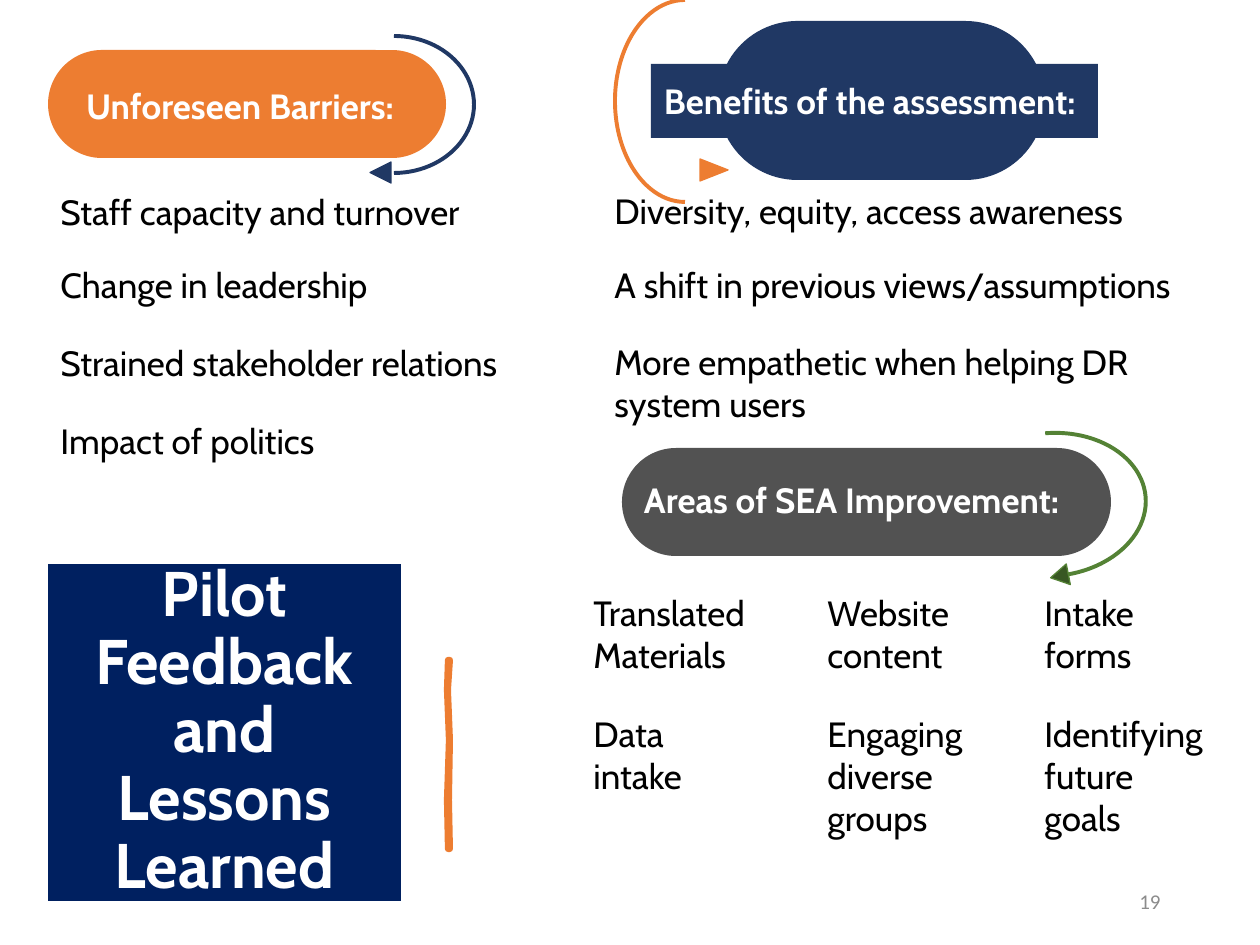
"""Build the slide on pilot feedback and lessons learned."""
from pptx import Presentation
from pptx.dml.color import RGBColor
from pptx.enum.shapes import MSO_SHAPE as Shape
from pptx.enum.text import MSO_ANCHOR as Anchor, MSO_AUTO_SIZE as Auto, PP_ALIGN as Align
from pptx.util import Emu, Pt

SCALE = 914400 / 126
ORANGE = RGBColor(0xED, 0x7D, 0x31)
BLUE = RGBColor(0x20, 0x38, 0x64)
NAVY = RGBColor(0x00, 0x20, 0x60)
GREEN = RGBColor(0x54, 0x82, 0x35)
FOREST = RGBColor(0x38, 0x57, 0x23)
DARK = RGBColor(0x52, 0x52, 0x52)
GREY = RGBColor(0x8C, 0x8C, 0x8C)
BLACK = RGBColor(0, 0, 0)
WHITE = RGBColor(0xFF, 0xFF, 0xFF)

RIGHT, LEFT = (162, 54), (54, 162)
BARRIERS = (
    ("Staff capacity and turnover", (48, 184, 428, 55)),
    ("Change in leadership", (48, 257, 386, 55)),
    ("Strained stakeholder relations", (48, 335, 489, 55)),
    ("Impact of politics", (48, 413, 334, 55)),
)
BENEFITS = (
    ("Diversity, equity, access awareness", (602, 183, 622, 55)),
    ("A shift in previous views/assumptions", (602, 257, 590, 55)),
    ("More empathetic when helping DR system users", (602, 334, 610, 97)),
)
AREAS = (
    ("Translated Materials", "Website content", "Intake forms"),
    ("Data intake", "Engaging diverse groups", "Identifying future goals"),
)
COLS = ((581, 184), (815, 184), (1032, 193))
ROWS = ((585, 97), (706, 140))


def px(*nums):
    """Turn pixel lengths into EMU."""
    return [Emu(round(num * SCALE)) for num in nums]


def write(shape, words, size=20, font="Cabin", color=BLACK, bold=False,
          align=Align.LEFT, anchor=Anchor.TOP, inset=None, space=None):
    """Put formatted text into a shape."""
    frame = shape.text_frame
    frame.word_wrap = True
    frame.auto_size = Auto.NONE
    frame.vertical_anchor = anchor
    if inset is not None:
        frame.margin_left, frame.margin_top = px(inset, inset)
        frame.margin_right, frame.margin_bottom = px(inset, inset)
    para = frame.paragraphs[0]
    para.alignment = align
    if space:
        para.line_spacing = space
    run = para.add_run()
    run.text = words
    run.font.size, run.font.name, run.font.bold = Pt(size), font, bold
    run.font.color.rgb = color


def paint(shape, fill=None, line=None, width=0.75):
    """Set the fill and line of a shape, without shadow."""
    shape.shadow.inherit = False
    for part, color in ((shape.fill, fill), (shape.line.fill, line)):
        if color is None:
            part.background()
        else:
            part.solid()
            part.fore_color.rgb = color
    if line is not None:
        shape.line.width = Pt(width)


def draw(slide, kind, box, turn=0, adjust=(), **look):
    """Add a preset shape."""
    shape = slide.shapes.add_shape(kind, *px(*box))
    shape.rotation = turn
    for spot, value in enumerate(adjust):
        shape.adjustments[spot] = value
    paint(shape, **look)
    return shape


def text(slide, words, box, **style):
    """Add a text box."""
    write(slide.shapes.add_textbox(*px(*box)), words, **style)


def pill(slide, box, color):
    """Add a fully rounded bar."""
    draw(slide, Shape.ROUNDED_RECTANGLE, box, adjust=(0.5,), fill=color)


def label(slide, words, box):
    """Add the white heading of a bar."""
    text(slide, words, box, color=WHITE, bold=True, anchor=Anchor.MIDDLE, inset=13)


def arrow(slide, arc, side, head, point, color, tip, turn=0):
    """Add a half ellipse with a triangle for its head."""
    draw(slide, Shape.ARC, arc, turn, side, line=color, width=2.25)
    draw(slide, Shape.ISOSCELES_TRIANGLE, head, point, fill=tip, line=color)


def stroke(slide):
    """Add the brush stroke beside the title."""
    dots = ((450, 660), (448, 690), (450, 740), (449, 800), (450, 849),
            (448, 849), (447, 800), (449, 740), (447, 690), (448, 660))
    pen = slide.shapes.build_freeform(*dots[0], scale=SCALE)
    pen.add_line_segments(dots[1:], close=True)
    paint(pen.convert_to_shape(), fill=ORANGE, line=ORANGE, width=3.5)


def title(slide, words):
    """Place and format the title."""
    shape = slide.shapes.title
    shape.left, shape.top, shape.width, shape.height = px(48, 564, 353, 337)
    shape.fill.solid()
    shape.fill.fore_color.rgb = NAVY
    write(shape, words, size=36, color=WHITE, bold=True, align=Align.CENTER,
          anchor=Anchor.MIDDLE, space=0.9)


def main():
    """Build and save the slide."""
    deck = Presentation()
    deck.slide_width, deck.slide_height = px(1260, 945)
    slide = deck.slides.add_slide(deck.slide_layouts[5])
    title(slide, "Pilot Feedback and Lessons Learned")
    stroke(slide)

    pill(slide, (48, 50, 398, 108), ORANGE)
    label(slide, "Unforeseen Barriers:", (73, 68, 398, 74))
    arrow(slide, (314, 36, 160, 137), RIGHT, (370, 162, 21, 21), 270, BLUE, BLUE)

    pill(slide, (718, 21, 327, 159), BLUE)
    draw(slide, Shape.RECTANGLE, (651, 64, 447, 74), fill=BLUE)
    label(slide, "Benefits of the assessment:", (651, 64, 447, 74))
    arrow(slide, (615, 0, 140, 202), LEFT, (703, 156, 22, 28), 90, ORANGE, ORANGE)

    pill(slide, (622, 448, 489, 108), DARK)
    label(slide, "Areas of SEA Improvement:", (631, 463, 483, 74))
    arrow(slide, (956, 433, 190, 143), RIGHT, (1049, 567, 21, 18), 258.8,
          GREEN, FOREST, turn=355.4)

    for words, box in BARRIERS + BENEFITS:
        text(slide, words, box)
    for line, (top, high) in zip(AREAS, ROWS):
        for words, (left, wide) in zip(line, COLS):
            text(slide, words, (left, top, wide, high))
    text(slide, "19", (890, 876, 283, 50), size=12, font="Calibri", color=GREY,
         align=Align.RIGHT, anchor=Anchor.MIDDLE)
    deck.save("out.pptx")


if __name__ == "__main__":
    main()
